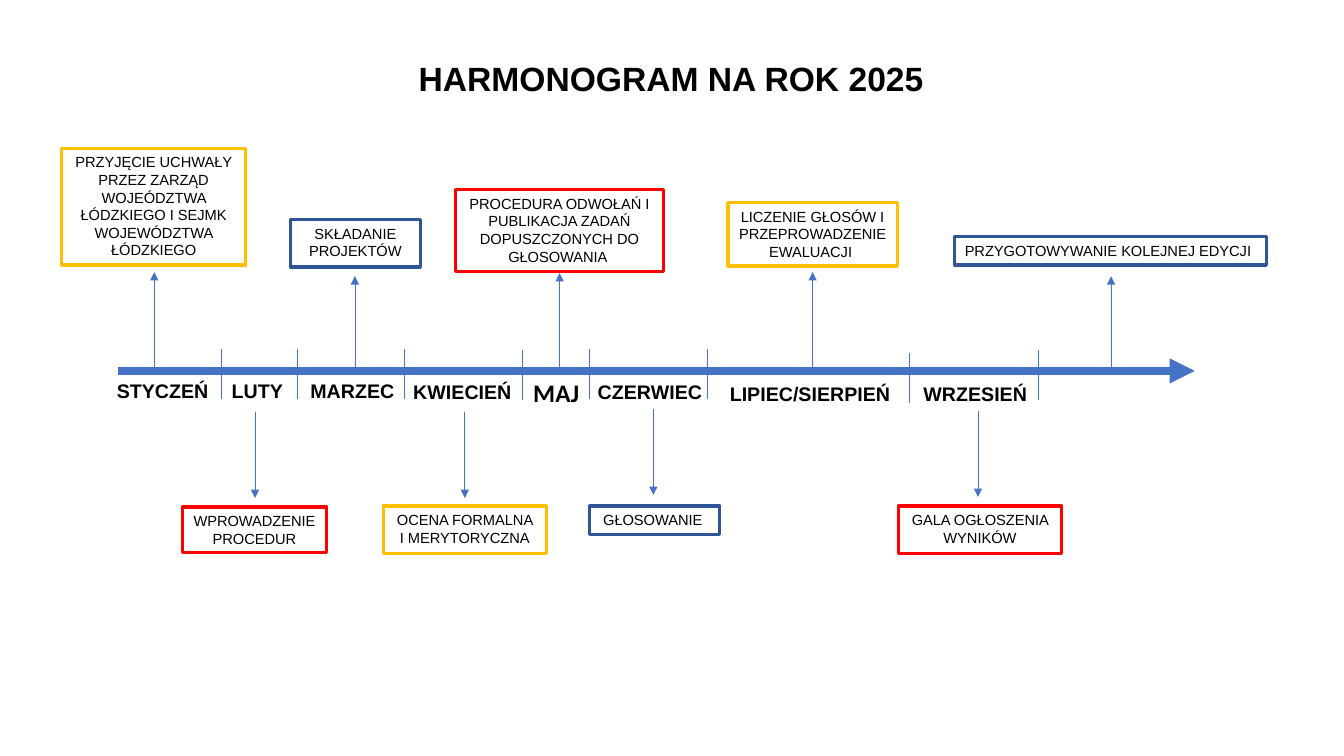
import pptx
import pptx.dml.color
import pptx.enum.shapes
import pptx.enum.text
import pptx.oxml.ns
import pptx.util
from lxml import etree
from pptx.util import Inches

BLACK = pptx.dml.color.RGBColor(0x00, 0x00, 0x00)
BLUE = pptx.dml.color.RGBColor(0x44, 0x72, 0xC4)
NAVY = pptx.dml.color.RGBColor(0x2F, 0x55, 0x97)
GOLD = pptx.dml.color.RGBColor(0xFF, 0xC0, 0x00)
RED = pptx.dml.color.RGBColor(0xFF, 0x00, 0x00)

AXIS_Y = 3.68
TICK_LENGTH = 0.5
DOWN_LENGTH = 0.85

TICKS = [(2.2, 3.46), (2.95, 3.46), (4.01, 3.46), (5.18, 3.47),
         (5.85, 3.46), (7.02, 3.46), (9.02, 3.5), (10.3, 3.47)]

MONTHS = [
    ("STYCZEŃ", 1.06, 3.71, 1.25),
    ("LUTY", 2.2, 3.71, 0.86),
    ("MARZEC", 2.98, 3.71, 1.08),
    ("KWIECIEŃ", 4, 3.72, 1.22),
    ("CZERWIEC", 5.83, 3.72, 1.31),
    ("LIPIEC/SIERPIEŃ", 7.14, 3.74, 2.12),
    ("WRZESIEŃ", 9.06, 3.74, 1.29),
]

STAGES_ABOVE = [
    ("PRZYJĘCIE UCHWAŁY PRZEZ ZARZĄD WOJEÓDZTWA ŁÓDZKIEGO I SEJMK "
     "WOJEWÓDZTWA ŁÓDZKIEGO", GOLD, (0.61, 1.47, 1.83, 1.16), 1.53, 2.7),
    ("SKŁADANIE PROJEKTÓW", NAVY, (2.88, 2.18, 1.29, 0.47), 3.52, 2.74),
    ("PROCEDURA ODWOŁAŃ I PUBLIKACJA ZADAŃ DOPUSZCZONYCH DO GŁOSOWANIA ",
     RED, (4.52, 1.88, 2.06, 0.81), 5.55, 2.71),
    ("LICZENIE GŁOSÓW I PRZEPROWADZENIE EWALUACJI ", GOLD,
     (7.22, 2.01, 1.68, 0.63), 8.06, 2.7),
]

STAGES_BELOW = [
    ("WPROWADZENIE PROCEDUR", RED, (1.81, 5.03, 1.43, 0.45), 2.53, 4.09),
    ("OCENA FORMALNA I MERYTORYCZNA", GOLD, (3.8, 5.02, 1.62, 0.47), 4.61, 4.09),
    ("GŁOSOWANIE ", NAVY, (5.85, 5.02, 1.29, 0.28), 6.48, 4.06),
    ("GALA OGŁOSZENIA WYNIKÓW", RED, (8.91, 5.02, 1.62, 0.47), 9.7, 4.08),
]


def write_text(holder, text, size=14, font="Arial", bold=True, centered=False, wrap=True):
    """Fill a shape with one formatted paragraph."""
    frame = holder.text_frame
    frame.word_wrap = wrap
    frame.auto_size = pptx.enum.text.MSO_AUTO_SIZE.SHAPE_TO_FIT_TEXT
    frame.vertical_anchor = pptx.enum.text.MSO_ANCHOR.TOP
    paragraph = frame.paragraphs[0]
    align = pptx.enum.text.PP_ALIGN
    paragraph.alignment = align.CENTER if centered else align.LEFT
    run = paragraph.add_run()
    run.text = text
    run.font.size = pptx.util.Pt(size)
    run.font.name = font
    run.font.bold = bold
    run.font.color.rgb = BLACK


def add_label(slide, text, left, top, width, height=0.34, **text_format):
    """Place free-standing text."""
    label = slide.shapes.add_textbox(
        Inches(left), Inches(top), Inches(width), Inches(height))
    write_text(label, text, **text_format)


def add_line(slide, start, end, weight=0.5, arrow=False):
    """Draw a straight blue line, with an arrowhead at its end if asked."""
    line = slide.shapes.add_connector(
        pptx.enum.shapes.MSO_CONNECTOR.STRAIGHT,
        Inches(start[0]), Inches(start[1]), Inches(end[0]), Inches(end[1]))
    line.line.color.rgb = BLUE
    line.line.width = pptx.util.Pt(weight)
    if arrow:
        outline = line.line._get_or_add_ln()
        etree.SubElement(outline, pptx.oxml.ns.qn("a:tailEnd"), type="triangle")
    properties = line._element.spPr
    etree.SubElement(properties, pptx.oxml.ns.qn("a:effectLst"))


def add_stage(slide, text, color, bounds, centered=True, wrap=True):
    """Draw an outlined box naming a stage of the schedule."""
    stage = slide.shapes.add_shape(
        pptx.enum.shapes.MSO_SHAPE.RECTANGLE, *map(Inches, bounds))
    stage.shadow.inherit = False
    stage.fill.background()
    stage.line.color.rgb = color
    stage.line.width = pptx.util.Pt(2.25)
    write_text(stage, text, size=10.5, bold=False, centered=centered, wrap=wrap)


def main():
    """Build the schedule slide and save it."""
    deck = pptx.Presentation()
    deck.slide_width = Inches(13.33)
    deck.slide_height = Inches(7.5)
    slide = deck.slides.add_slide(deck.slide_layouts[6])

    add_line(slide, (1.17, AXIS_Y), (11.85, AXIS_Y), weight=6, arrow=True)
    add_label(slide, "HARMONOGRAM NA ROK 2025", 3.59, 0.53, 6.13, 0.5,
              size=24, centered=True)
    for x, top in TICKS:
        add_line(slide, (x, top), (x, top + TICK_LENGTH))
    for month, left, top, width in MONTHS:
        add_label(slide, month, left, top, width)
    add_label(slide, "MAJ", 5.19, 3.69, 0.69, 0.4, size=18, font="Calibri")

    for text, color, bounds, x, tip in STAGES_ABOVE:
        add_line(slide, (x, AXIS_Y), (x, tip), arrow=True)
        add_stage(slide, text, color, bounds)
    for text, color, bounds, x, top in STAGES_BELOW:
        add_line(slide, (x, top), (x, top + DOWN_LENGTH), arrow=True)
        add_stage(slide, text, color, bounds)
    add_line(slide, (11.02, AXIS_Y), (11.02, 2.74), arrow=True)
    add_stage(slide, "PRZYGOTOWYWANIE KOLEJNEJ EDYCJI", NAVY,
              (9.47, 2.35, 3.09, 0.28), centered=False, wrap=False)

    deck.save("out.pptx")


if __name__ == "__main__":
    main()
